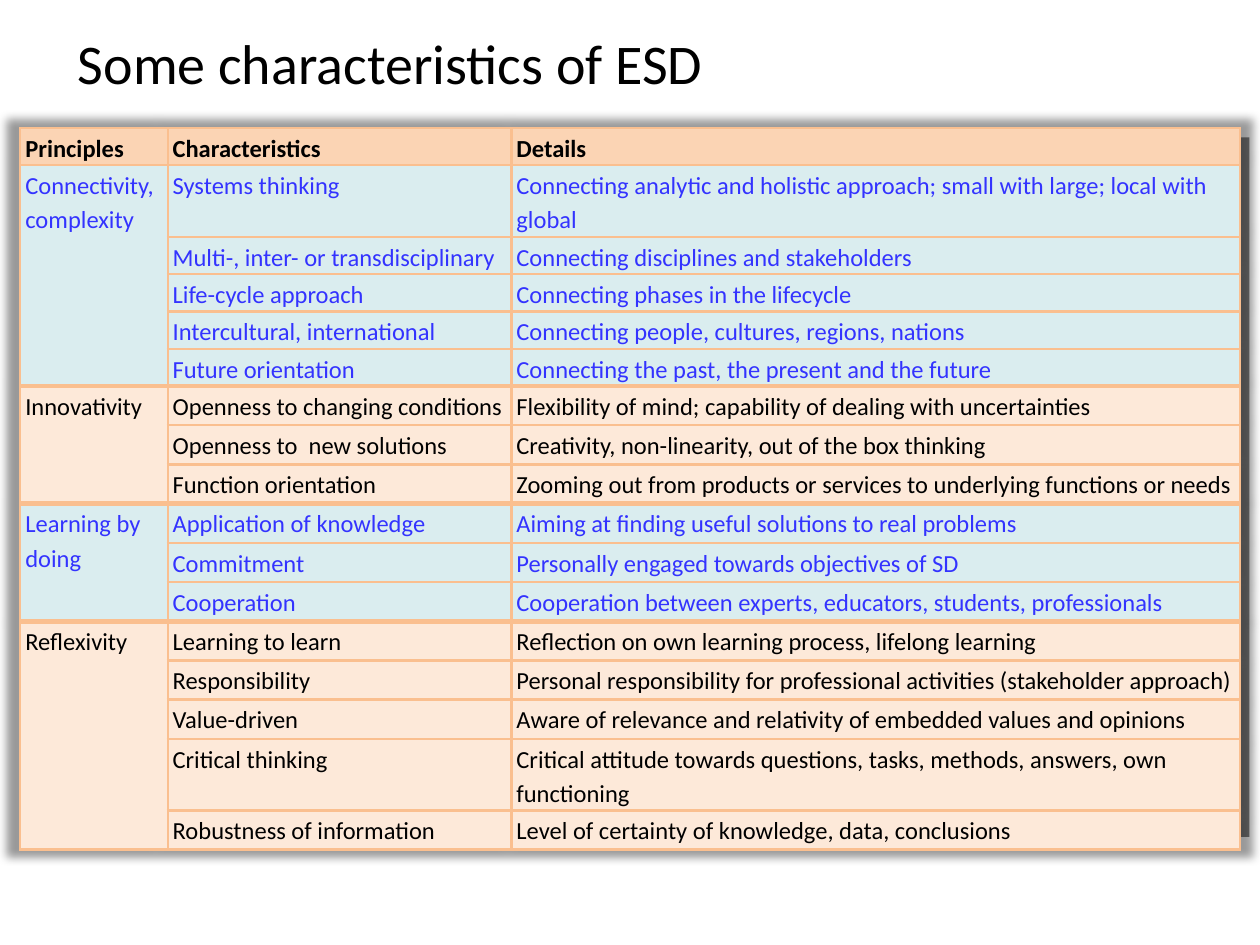
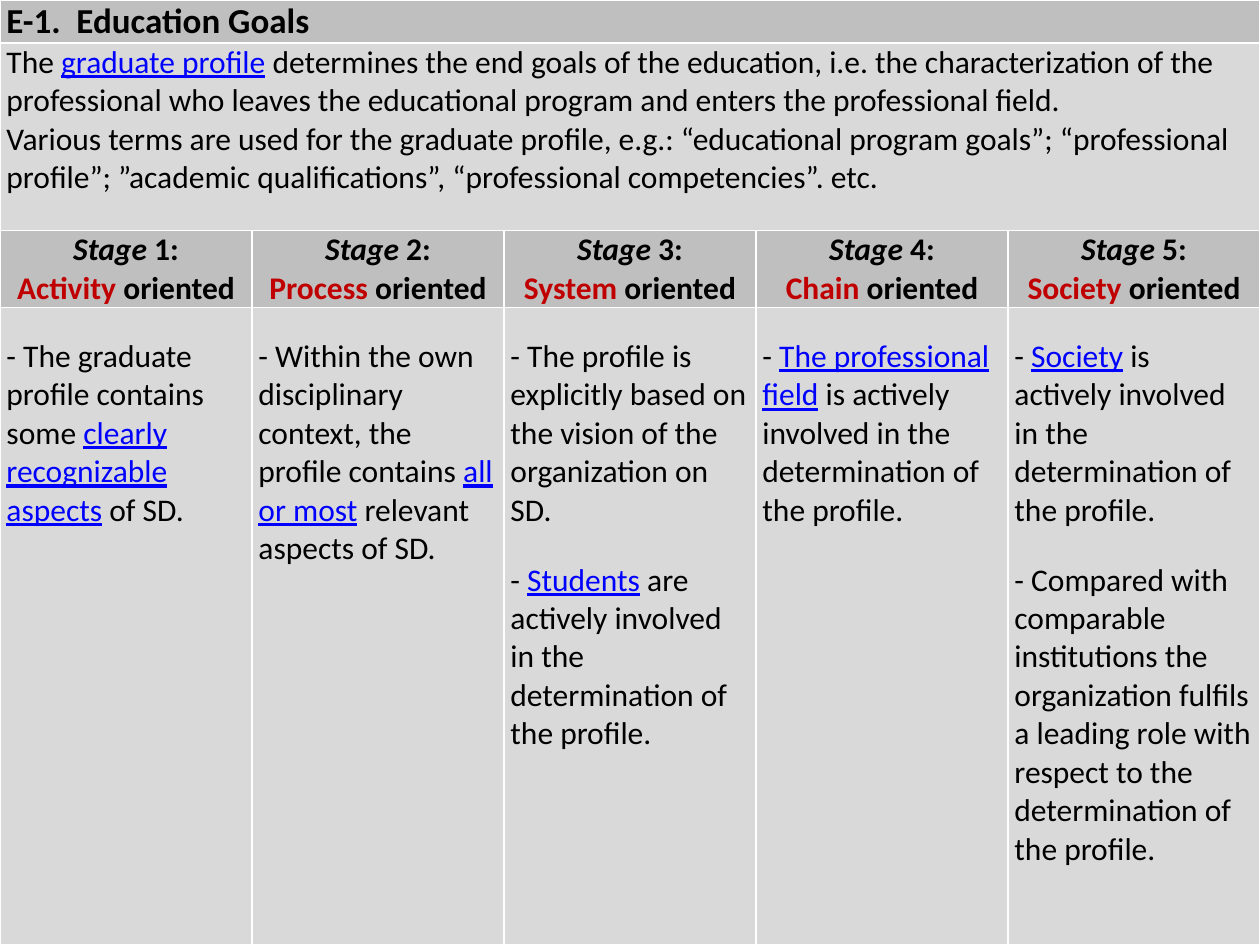
import pptx
import pptx.dml.color
import pptx.enum.shapes
import pptx.enum.text
import pptx.oxml
import pptx.oxml.ns
import pptx.util
from lxml import etree

Cm, Pt = pptx.util.Cm, pptx.util.Pt
CENTER = pptx.enum.text.PP_ALIGN.CENTER
FONT = "Calibri"
BLACK, WHITE, BLUE, ORANGE = "000000", "FFFFFF", "3333FF", "FABF8F"
LIGHT_GREY, MID_GREY, DARK_GREY = "D9D9D9", "BFBFBF", "808080"

# Slide 1: (principle, fill, text colour, row height in cm, [(characteristic, detail)])
TITLE = "Some characteristics of ESD"
HEADINGS = ("Principles", "Characteristics", "Details")
HEADING_FILL = "FBD4B4"
AQUA, PEACH = "DAEDEF", "FDE9D9"
PRINCIPLES = [
    ("Connectivity, complexity", AQUA, BLUE, 0.73, [
        ("Systems thinking",
         "Connecting analytic and holistic approach; small with large; local with global"),
        ("Multi-, inter- or transdisciplinary", "Connecting disciplines and stakeholders"),
        ("Life-cycle approach", "Connecting phases in the lifecycle"),
        ("Intercultural, international", "Connecting people, cultures, regions, nations"),
        ("Future orientation", "Connecting the past, the present and the future"),
    ]),
    ("Innovativity", PEACH, BLACK, 0.79, [
        ("Openness to changing conditions",
         "Flexibility of mind; capability of dealing with uncertainties"),
        ("Openness to  new solutions", "Creativity, non-linearity, out of the box thinking"),
        ("Function orientation",
         "Zooming out from products or services to underlying functions or needs"),
    ]),
    ("Learning by doing", AQUA, BLUE, 0.79, [
        ("Application of knowledge", "Aiming at finding useful solutions to real problems"),
        ("Commitment", "Personally engaged towards objectives of SD"),
        ("Cooperation", "Cooperation between experts, educators, students, professionals"),
    ]),
    ("Reflexivity", PEACH, BLACK, 0.79, [
        ("Learning to learn", "Reflection on own learning process, lifelong learning"),
        ("Responsibility",
         "Personal responsibility for professional activities (stakeholder approach)"),
        ("Value-driven", "Aware of relevance and relativity of embedded values and opinions"),
        ("Critical thinking",
         "Critical attitude towards questions, tasks, methods, answers, own functioning"),
        ("Robustness of information", "Level of certainty of knowledge, data, conclusions"),
    ]),
]
PRINCIPLE_COLS = (2.97, 6.93, 14.68)
HEADING_HEIGHT, TWO_LINE_HEIGHT, ONE_LINE_CHARS = 0.73, 1.41, 75

# Slide 2: a paragraph is a list of runs, each (text, style)
STYLES = {
    "plain": {},
    "bold": {"bold": True},
    "stage": {"bold": True, "italic": True},
    "focus": {"bold": True, "color": "C00000"},
    "link": {"underline": True, "color": "0000FF"},
}
GOALS_TITLE = "E-1.  Education Goals"
GOALS_INTRO = [
    [("The ", "plain"), ("graduate profile", "link"),
     (" determines the end goals of the education, i.e. the characterization of the "
      "professional who leaves the educational program and enters the professional field.",
      "plain")],
    [("Various terms are used for the graduate profile, e.g.: “educational program goals”; "
      "“professional profile”; ”academic qualifications”, “professional competencies”. etc.",
      "plain")],
]
INVOLVED = " is actively involved in the determination of the profile."
STAGES = [
    ("Activity", [
        [("- The graduate profile contains some ", "plain"),
         ("clearly recognizable aspects", "link"), (" of SD.", "plain")]]),
    ("Process", [
        [("- Within the own disciplinary context, the profile contains ", "plain"),
         ("all or most", "link"), (" relevant aspects of SD.", "plain")]]),
    ("System", [
        [("- The profile is explicitly based on the vision of the organization on SD.", "plain")],
        [("- ", "plain"), ("Students", "link"),
         (" are actively involved in the determination of the profile.", "plain")]]),
    ("Chain", [
        [("- ", "plain"), ("The professional field", "link"), (INVOLVED, "plain")]]),
    ("Society", [
        [("- ", "plain"), ("Society", "link"), (INVOLVED, "plain")],
        [("- Compared with comparable institutions the organization fulfils a leading role "
          "with respect to the determination of the profile.", "plain")]]),
]
GOALS_ROWS = (0.87, 3.78, 1.55, 12.85)


def rgb(color):
    return pptx.dml.color.RGBColor.from_string(color)


def add_run(p, text, size, color=BLACK, **formats):
    r = p.add_run()
    r.text = text
    r.font.color.rgb = rgb(color)
    for name, value in {"name": FONT, "size": Pt(size), **formats}.items():
        setattr(r.font, name, value)


def write(tf, paragraphs, size, gap=0):
    """Fill a text frame with paragraphs of (text, style) runs."""
    for i, runs in enumerate(paragraphs):
        p = tf.add_paragraph() if i else tf.paragraphs[0]
        if i:
            p.space_before = Pt(gap)
        for text, style in runs:
            add_run(p, text, size, **STYLES[style])


def set_cell(cell, fill, margins, border, widths):
    """Set fill, (side, top) margins in cm and (left, right, top, bottom) border widths."""
    cell.fill.solid()
    cell.fill.fore_color.rgb = rgb(fill)
    side, top = margins
    for name, value in {"left": side, "right": side, "top": top, "bottom": top}.items():
        setattr(cell, "margin_" + name, Cm(value))
    for i, (edge, width) in enumerate(zip("LRTB", widths)):
        ln = etree.Element(pptx.oxml.ns.qn("a:ln" + edge), w=str(Pt(width)))
        solid = etree.SubElement(ln, pptx.oxml.ns.qn("a:solidFill"))
        etree.SubElement(solid, pptx.oxml.ns.qn("a:srgbClr"), val=border)
        cell._tc.get_or_add_tcPr().insert(i, ln)


def add_table(s, left, top, cols, rows):
    table = s.shapes.add_table(len(rows), len(cols), Cm(left), Cm(top),
                               Cm(sum(cols)), Cm(sum(rows))).table
    table.first_row = table.horz_banding = False
    for col, width in zip(table.columns, cols):
        col.width = Cm(width)
    for row, height in zip(table.rows, rows):
        row.height = Cm(height)
    return table


def add_glow_shadow(table):
    """Put a soft shadow, slightly larger than the table, behind it."""
    table._tbl.tblPr.insert(0, pptx.oxml.parse_xml(
        f'<a:effectLst {pptx.oxml.ns.nsdecls("a")}>'
        '<a:outerShdw blurRad="63500" sx="102000" sy="102000" algn="ctr" rotWithShape="0">'
        '<a:srgbClr val="000000"><a:alpha val="40000"/></a:srgbClr>'
        '</a:outerShdw></a:effectLst>'))


def build_characteristics(s):
    back = s.shapes.add_shape(pptx.enum.shapes.MSO_SHAPE.RECTANGLE,
                              Cm(0.58), Cm(2.77), Cm(24.61), Cm(14.1))
    back.shadow.inherit = False
    back.fill.solid()
    back.fill.fore_color.rgb = rgb(DARK_GREY)
    back.line.fill.background()

    heights = [HEADING_HEIGHT]
    for _, _, _, height, rows in PRINCIPLES:
        heights += [TWO_LINE_HEIGHT if len(detail) > ONE_LINE_CHARS else height
                    for _, detail in rows]
    table = add_table(s, 0.41, 2.58, PRINCIPLE_COLS, heights)
    add_glow_shadow(table)

    def put(row, col, text, fill, color, top=1.5, bottom=1.5, bold=False):
        cell = table.cell(row, col)
        set_cell(cell, fill, (0.1, 0.03), ORANGE, (1.5, 1.5, top, bottom))
        p = cell.text_frame.paragraphs[0]
        p.line_spacing = 1.15
        add_run(p, text, 14, color, bold=bold)

    for col, heading in enumerate(HEADINGS):
        put(0, col, heading, HEADING_FILL, BLACK, bold=True)
    first = 1
    for group, (principle, fill, color, _, rows) in enumerate(PRINCIPLES):
        last = first + len(rows) - 1
        above = 3 if group else 1.5
        below = 3 if group < len(PRINCIPLES) - 1 else 1.5
        table.cell(first, 0).merge(table.cell(last, 0))
        put(first, 0, principle, fill, color, above, below)
        for row, texts in enumerate(rows, first):
            for col, text in enumerate(texts, 1):
                put(row, col, text, fill, color,
                    above if row == first else 1.5, below if row == last else 1.5)
        first = last + 1

    tf = s.shapes.add_textbox(Cm(1.57), Cm(0.58), Cm(12.73), Cm(1.37)).text_frame
    for name in ("left", "right", "top", "bottom"):
        setattr(tf, "margin_" + name, 0)
    tf.word_wrap = False
    tf.auto_size = pptx.enum.text.MSO_AUTO_SIZE.SHAPE_TO_FIT_TEXT
    write(tf, [[(TITLE, "plain")]], 32)


def build_goals(s):
    count = len(STAGES)
    table = add_table(s, 0, 0, [25.4 / count] * count, GOALS_ROWS)

    def put(row, col, paragraphs, fill, size=18, gap=0):
        cell = table.cell(row, col)
        set_cell(cell, fill, (0.13, 0), WHITE, (1, 1, 1, 1))
        write(cell.text_frame, paragraphs, size, gap)
        return cell

    for row in (0, 1):
        table.cell(row, 0).merge(table.cell(row, count - 1))
    put(0, 0, [[(GOALS_TITLE, "bold")]], MID_GREY, 20)
    put(1, 0, GOALS_INTRO, LIGHT_GREY)
    for col, (focus, points) in enumerate(STAGES):
        heading = [("Stage", "stage"), (f" {col + 1}:", "bold")]
        p = put(2, col, [heading], MID_GREY).text_frame.paragraphs[0]
        p.alignment = CENTER
        p.add_line_break()
        add_run(p, focus + " ", 18, **STYLES["focus"])
        add_run(p, "oriented", 18, **STYLES["bold"])
        put(3, col, points, LIGHT_GREY, gap=18).margin_top = Cm(0.6)


def main():
    prs = pptx.Presentation()
    prs.slide_width, prs.slide_height = Cm(25.4), Cm(19.05)
    for build in (build_characteristics, build_goals):
        build(prs.slides.add_slide(prs.slide_layouts[6]))
    prs.save("out.pptx")


if __name__ == "__main__":
    main()
